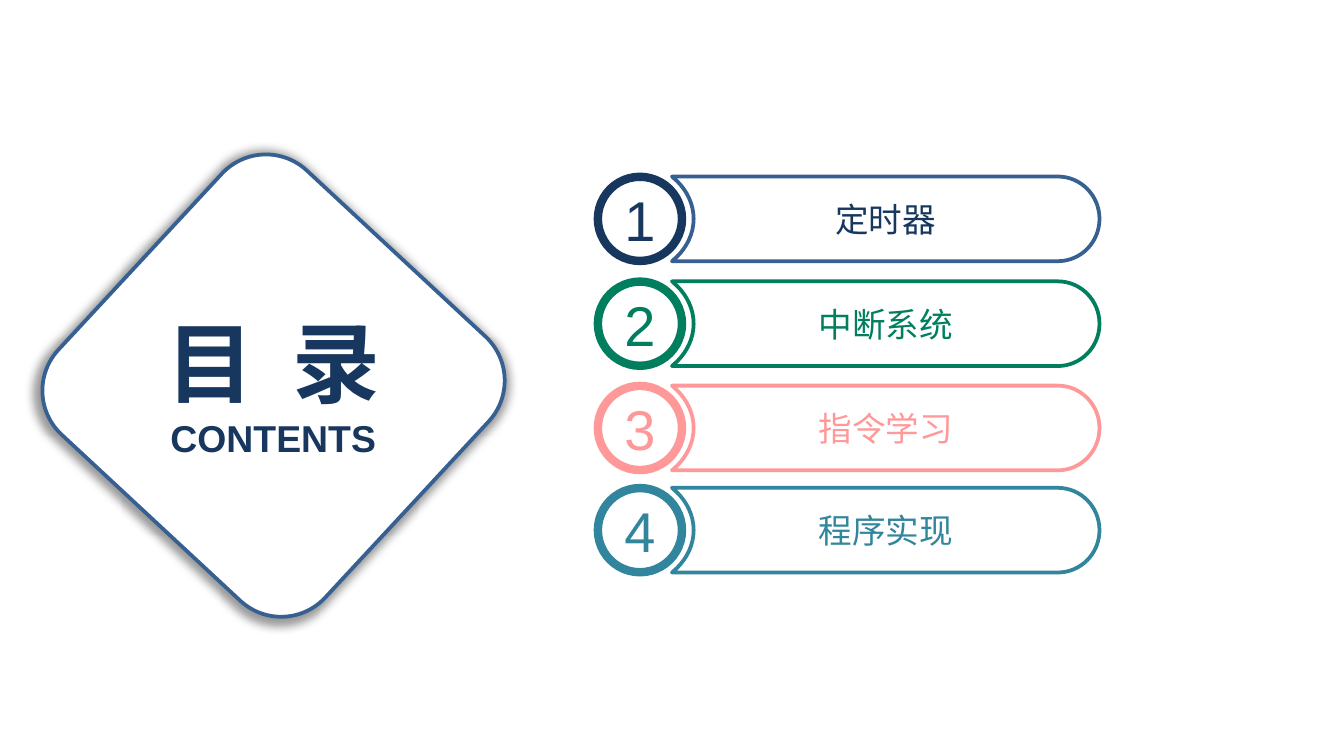
from lxml import etree
from pptx import Presentation
from pptx.dml.color import RGBColor
from pptx.enum.shapes import MSO_SHAPE
from pptx.enum.text import MSO_ANCHOR, PP_ALIGN
from pptx.oxml import parse_xml
from pptx.oxml.ns import qn
from pptx.util import Cm, Pt

ROUNDED = MSO_SHAPE.ROUNDED_RECTANGLE
OVAL = MSO_SHAPE.OVAL
MIDDLE, TOP = MSO_ANCHOR.MIDDLE, MSO_ANCHOR.TOP
CENTER = PP_ALIGN.CENTER

FONT = "Arial"
WHITE = RGBColor(0xFF, 0xFF, 0xFF)
NAVY = RGBColor(0x17, 0x37, 0x5E)
BLUE = RGBColor(0x37, 0x60, 0x92)
GREEN = RGBColor(0x00, 0x7E, 0x5D)
PINK = RGBColor(0xFF, 0x99, 0x99)
TEAL = RGBColor(0x31, 0x85, 0x9C)

TITLE = "目 录"
SUBTITLE = "CONTENTS"
# label, top in cm, banner outline, badge and text colour
CHAPTERS = [
    ("定时器", 3.34, BLUE, NAVY),
    ("中断系统", 5.32, GREEN, GREEN),
    ("指令学习", 7.29, PINK, PINK),
    ("程序实现", 9.22, TEAL, TEAL),
]

# Centimetres
ROW_HEIGHT = 1.59
BADGE_LEFT = 11.3
# Lower half of a banner, right tip to notch: x, distance below the middle
BANNER_HALF = [
    (20.78, 0), (20.78, 0.44), (20.43, 0.8), (19.99, 0.8),
    (12.7, 0.8),
    (12.8, 0.71), (12.98, 0.53), (13.11, 0.28), (13.11, 0),
]
# Points used by each segment of the whole outline: 3 is a curve, 1 a line
BANNER_SEGMENTS = (3, 1, 1, 3) * 2

SHADOW = (
    '<a:effectLst xmlns:a="http://schemas.openxmlformats.org/drawingml/2006/main">'
    '<a:outerShdw blurRad="63500" sx="102000" sy="102000" algn="ctr" rotWithShape="0">'
    '<a:srgbClr val="000000"><a:alpha val="40000"/></a:srgbClr>'
    "</a:outerShdw></a:effectLst>"
)


def set_text(shape, text, size, color, bold=False, anchor=MIDDLE):
    frame = shape.text_frame
    frame.margin_left = frame.margin_right = 0
    frame.margin_top = frame.margin_bottom = 0
    frame.word_wrap = True
    frame.vertical_anchor = anchor
    frame.text = text
    paragraph = frame.paragraphs[0]
    paragraph.alignment = CENTER
    font = paragraph.runs[0].font
    font.name, font.size, font.bold = FONT, Pt(size), bold
    font.color.rgb = color


def set_outline(shape, color, width):
    shape.shadow.inherit = False
    shape.line.color.rgb = color
    shape.line.width = Pt(width)


def bend_segments(shape, segments):
    """Turn each group of three straight segments into one Bézier curve."""
    lines = iter(list(shape.element.iter(qn("a:lnTo"))))
    for count in segments:
        group = [next(lines) for _ in range(count)]
        if count == 3:
            curve = etree.Element(qn("a:cubicBezTo"))
            group[0].addprevious(curve)
            for line in group:
                curve.append(line[0])
                line.getparent().remove(line)


def add_banner(shapes, top, label, outline, color):
    """Bar with a round right end and a notch that follows the badge."""
    middle = top + ROW_HEIGHT / 2
    upper_half = [(x, -y) for x, y in reversed(BANNER_HALF)]
    points = [
        (Cm(x), Cm(middle + y)) for x, y in BANNER_HALF + upper_half[1:]
    ]
    builder = shapes.build_freeform(*points[0])
    builder.add_line_segments(points[1:], close=True)
    banner = builder.convert_to_shape()
    bend_segments(banner, BANNER_SEGMENTS)
    banner.fill.background()
    set_outline(banner, outline, 2)
    set_text(banner, label, 18, color)


def add_badge(shapes, top, number, color):
    badge = shapes.add_shape(
        OVAL, Cm(BADGE_LEFT), Cm(top), Cm(ROW_HEIGHT), Cm(ROW_HEIGHT)
    )
    badge.fill.solid()
    badge.fill.fore_color.rgb = WHITE
    set_outline(badge, color, 4.5)
    set_text(badge, str(number), 30, color)


def add_diamond(shapes):
    diamond = shapes.add_shape(ROUNDED, Cm(1.73), Cm(3.88), Cm(6.88), Cm(6.81))
    diamond.rotation = 42.9
    diamond.fill.solid()
    diamond.fill.fore_color.rgb = WHITE
    set_outline(diamond, BLUE, 2)
    properties = diamond.element.spPr
    properties.replace(properties.find(qn("a:effectLst")), parse_xml(SHADOW))


def add_heading(slide):
    title = slide.shapes.title
    title.left, title.top = Cm(2.34), Cm(5.82)
    title.width, title.height = Cm(5.66), Cm(2.01)
    set_text(title, TITLE, 47, NAVY, bold=True)
    # Letter spacing widens the gap between the two characters
    title.text_frame.paragraphs[0].runs[0].font._element.set("spc", "500")
    # The title lies over the diamond
    slide.shapes._spTree.append(title.element)
    subtitle = slide.shapes.add_textbox(Cm(2.36), Cm(7.85), Cm(5.61), Cm(0.86))
    set_text(subtitle, SUBTITLE, 20, NAVY, bold=True, anchor=TOP)


def main():
    presentation = Presentation()
    presentation.slide_width, presentation.slide_height = Cm(25.4), Cm(14.28)
    slide = presentation.slides.add_slide(presentation.slide_layouts[5])
    add_diamond(slide.shapes)
    add_heading(slide)
    for number, (label, top, outline, color) in enumerate(CHAPTERS, start=1):
        add_banner(slide.shapes, top, label, outline, color)
        add_badge(slide.shapes, top, number, color)
    presentation.save("out.pptx")


if __name__ == "__main__":
    main()
